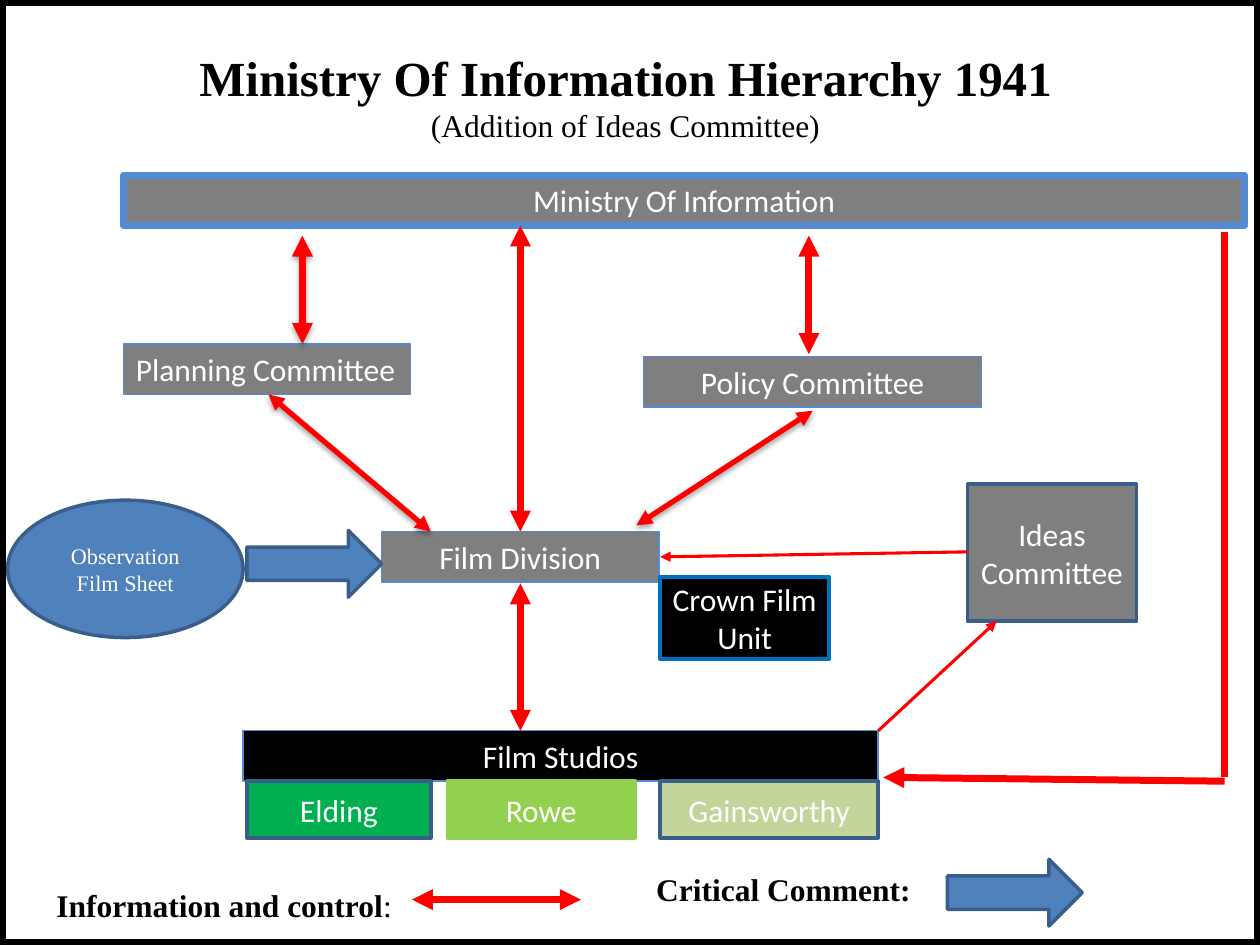
from lxml import etree
from pptx import Presentation
from pptx.dml.color import RGBColor
from pptx.enum.shapes import MSO_CONNECTOR, MSO_SHAPE
from pptx.enum.text import MSO_ANCHOR, MSO_AUTO_SIZE, PP_ALIGN
from pptx.oxml.ns import qn
from pptx.util import Inches, Pt

RECT, OVAL, ARROW = MSO_SHAPE.RECTANGLE, MSO_SHAPE.OVAL, MSO_SHAPE.RIGHT_ARROW
LEFT, CENTER = PP_ALIGN.LEFT, PP_ALIGN.CENTER
TOP, MIDDLE = MSO_ANCHOR.TOP, MSO_ANCHOR.MIDDLE
STRAIGHT = MSO_CONNECTOR.STRAIGHT
NO_FIT = MSO_AUTO_SIZE.NONE

SANS, SERIF = "Calibri", "Times New Roman"
COLORS = {
    "white": "FFFFFF", "black": "000000", "grey": "7F7F7F", "red": "FF0000",
    "blue": "4F81BD", "dark blue": "395E89", "light blue": "538CD5",
    "bright blue": "0070C0", "green": "00B050", "lime": "92D050", "sage": "C2D59B",
}


def rgb(name):
    return RGBColor.from_string(COLORS[name])


def add_text(paragraph, text, size=18, font=SANS, color="white", bold=False):
    run = paragraph.add_run()
    run.text = text
    run.font.size = Pt(size)
    run.font.name = font
    run.font.bold = bold
    run.font.color.rgb = rgb(color)


class Chart:
    """Style and slide of the hierarchy chart."""

    def __init__(self, slide):
        self.slide = slide

    def title(self, heading, subheading, box):
        title = self.slide.shapes.title
        title.left, title.top, title.width, title.height = map(Inches, box)
        frame = title.text_frame
        frame.auto_size = NO_FIT
        frame.vertical_anchor = MIDDLE
        paragraph = frame.paragraphs[0]
        paragraph.alignment = CENTER
        add_text(paragraph, heading, 28, SERIF, "black", True)
        paragraph.add_line_break()
        add_text(paragraph, subheading, 18, SERIF, "black")

    def block(self, box, fill, line, width, kind=RECT):
        block = self.slide.shapes.add_shape(kind, *map(Inches, box))
        block.shadow.inherit = False
        if fill:
            block.fill.solid()
            block.fill.fore_color.rgb = rgb(fill)
        else:
            block.fill.background()
        block.line.color.rgb = rgb(line)
        block.line.width = Pt(width)
        return block

    def node(self, text, box, fill="grey", line="dark blue", width=2,
             kind=RECT, anchor=MIDDLE, align=CENTER, **font):
        frame = self.block(box, fill, line, width, kind).text_frame
        frame.word_wrap = True
        frame.vertical_anchor = anchor
        frame.paragraphs[0].alignment = align
        add_text(frame.paragraphs[0], text, **font)

    def body(self, text, box, fill="grey", width=0.75, align=CENTER):
        """Add a box of the chain of command, with its text at the top."""
        self.node(text, box, fill, "light blue", width, anchor=TOP, align=align)

    def comment_arrow(self, left, top):
        self.block((left, top, 1.07, 0.53), "blue", "dark blue", 2, ARROW)

    def label(self, box, *parts):
        """Add a key label from (text, bold) parts."""
        label = self.slide.shapes.add_textbox(*map(Inches, box))
        label.text_frame.word_wrap = True
        for text, bold in parts:
            add_text(label.text_frame.paragraphs[0], text, 18, SERIF, "black", bold)

    def link(self, start, end, width=4, ends=("headEnd", "tailEnd"), shadow=False):
        link = self.slide.shapes.add_connector(
            STRAIGHT, *map(Inches, start + end))
        link.line.color.rgb = rgb("red")
        link.line.width = Pt(width)
        properties = link.element.spPr
        outline = properties.find(qn("a:ln"))
        for end_tag in ends:
            etree.SubElement(outline, qn("a:" + end_tag), type="triangle")
        effects = etree.SubElement(properties, qn("a:effectLst"))
        if shadow:
            cast = etree.SubElement(
                effects, qn("a:outerShdw"), blurRad=str(Pt(3.1)),
                dist=str(Pt(1.8)), dir="5400000", rotWithShape="0")
            shade = etree.SubElement(cast, qn("a:srgbClr"), val=COLORS["black"])
            etree.SubElement(shade, qn("a:alpha"), val="35000")


def main():
    deck = Presentation()
    deck.slide_width, deck.slide_height = Inches(10), Inches(7.5)
    chart = Chart(deck.slides.add_slide(deck.slide_layouts[5]))
    chart.title("Ministry Of Information Hierarchy 1941",
                "(Addition of Ideas Committee)", (0.75, 0.29, 8.43, 0.94))

    chart.body("Ministry Of Information", (0.98, 1.39, 8.9, 0.4), width=4)
    chart.body("Planning Committee", (0.98, 2.73, 2.28, 0.4), align=LEFT)
    chart.body("Policy Committee", (5.11, 2.83, 2.68, 0.4))
    chart.body("Film Division", (3.03, 4.22, 2.2, 0.4))
    chart.body("Film Studios", (1.93, 5.8, 5.04, 0.4), fill="black")

    # Information and control
    chart.link((2.4, 1.87), (2.4, 2.73), shadow=True)
    chart.link((6.42, 1.87), (6.42, 2.81))
    chart.link((4.13, 1.79), (4.13, 4.22))
    chart.link((4.13, 4.63), (4.13, 5.8))
    chart.link((9.72, 1.84), (9.72, 6.17), ends=())
    chart.link((9.72, 6.2), (7.01, 6.17), ends=("tailEnd",))
    chart.link((2.13, 3.13), (3.42, 4.22), 3, shadow=True)
    chart.link((6.45, 3.26), (5.05, 4.17), 3, shadow=True)

    # Key
    chart.label((0.35, 6.98, 3.07, 0.4), ("Information and control", True), (":", False))
    chart.link((3.27, 7.14), (4.61, 7.14))
    chart.label((5.11, 6.86, 2.41, 0.4), ("Critical Comment:", True))
    chart.comment_arrow(7.52, 6.82)

    chart.node("Observation Film Sheet", (0.06, 3.97, 1.87, 1.09), "blue",
               kind=OVAL, size=12.7, font=SERIF)
    chart.comment_arrow(1.96, 4.21)

    studios = [
        ("Elding", 1.96, 1.46, "green", "dark blue"),
        ("Rowe", 3.55, 1.49, "lime", "lime"),
        ("Gainsworthy", 5.24, 1.73, "sage", "dark blue"),
    ]
    for studio, left, width, fill, line in studios:
        chart.node(studio, (left, 6.2, width, 0.45), fill, line)

    chart.node("Crown Film Unit", (5.24, 4.58, 1.34, 0.65), "black", "bright blue", 2.5)
    chart.node("Ideas Committee", (7.68, 3.84, 1.34, 1.09))
    chart.link((7.68, 4.38), (5.24, 4.42), 1.75, ("tailEnd",))
    chart.link((6.97, 5.8), (7.91, 4.93), 1.75, ("tailEnd",))

    chart.block((0, 0, 10, 7.5), None, "black", 7)
    deck.save("out.pptx")


if __name__ == "__main__":
    main()
